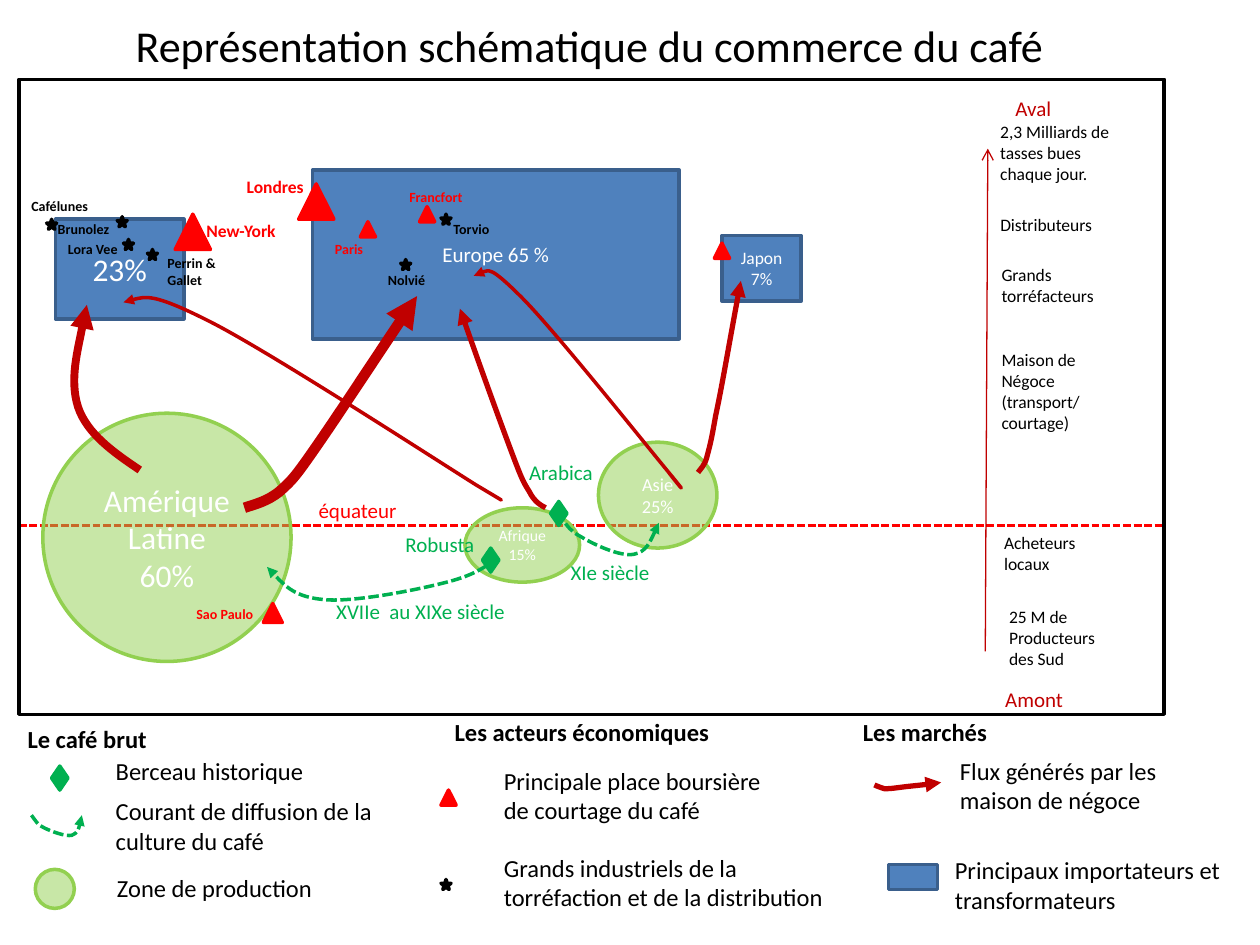
from pptx import Presentation
from pptx.dml.color import RGBColor
from pptx.enum.dml import MSO_LINE
from pptx.enum.shapes import MSO_CONNECTOR, MSO_SHAPE
from pptx.enum.text import MSO_ANCHOR, MSO_AUTO_SIZE, PP_ALIGN
from pptx.oxml.ns import qn
from pptx.util import Cm, Pt
from lxml import etree

RECT, OVAL = MSO_SHAPE.RECTANGLE, MSO_SHAPE.OVAL
DIAMOND, STAR = MSO_SHAPE.DIAMOND, MSO_SHAPE.STAR_5_POINT
PEAK = MSO_SHAPE.ISOSCELES_TRIANGLE
STRAIGHT, DASH = MSO_CONNECTOR.STRAIGHT, MSO_LINE.SQUARE_DOT
CENTER, LEFT = PP_ALIGN.CENTER, PP_ALIGN.LEFT
MIDDLE, GROW = MSO_ANCHOR.MIDDLE, MSO_AUTO_SIZE.SHAPE_TO_FIT_TEXT

BLACK, WHITE, RED, CRIMSON = "000000", "FFFFFF", "FF0000", "C00000"
BLUE, NAVY, LIME, GREEN = "4F81BD", "3A5F8C", "92D050", "00B050"
INCH = 2.54  # places below are in inches, lengths are set in cm


def write(frame, text, size, color, bold=False, align=LEFT):
    frame.text = text
    frame.word_wrap = True
    for para in frame.paragraphs:
        para.alignment = align
        for run in para.runs:
            run.font.name = "Calibri"
            run.font.size = Pt(size)
            run.font.bold = bold
            run.font.color.rgb = RGBColor.from_string(color)


def stroke(item, color, width, dash=None, end=None, head="triangle"):
    item.line.color.rgb = RGBColor.from_string(color)
    item.line.width = Pt(width)
    if dash:
        item.line.dash_style = dash
    if end:
        line = item.element.spPr.find(qn("a:ln"))
        etree.SubElement(line, qn("a:" + end), type=head)


deck = Presentation()
deck.slide_width, deck.slide_height = Cm(25.4), Cm(19.05)
slide = deck.slides.add_slide(deck.slide_layouts[6])
shapes = slide.shapes

# Title
title = shapes.add_textbox(*[Cm(v * INCH) for v in (0.45, 0.21, 8.46, 0.3)])
write(title.text_frame, "Représentation schématique du commerce du café",
      25.2, BLACK, align=CENTER)
title.text_frame.vertical_anchor = MIDDLE

# Equator and supply chain axis
for ends, color, width, dash, end in [
    ((0.15, 4.17, 9.24, 4.17), RED, 1.5, DASH, None),
    ((7.82, 5.17, 7.84, 1.18), CRIMSON, 0.75, None, "tailEnd"),
]:
    rule = shapes.add_connector(STRAIGHT, *[Cm(v * INCH) for v in ends])
    stroke(rule, color, width, dash, end, "arrow")
    etree.SubElement(rule.element.spPr, qn("a:effectLst"))

# Markets, production zones and markers, with their legend keys, then frame
solids = [
    (RECT, BLUE, NAVY, [
        ((0.44, 1.74, 1.02, 0.79), "23%", 18),
        ((2.48, 1.35, 2.91, 1.34), "Europe 65 %", 12),
        ((5.73, 1.87, 0.63, 0.52), "Japon 7%", 10),
        ((7.05, 6.86, 0.39, 0.2), "", 10)]),
    (OVAL, LIME, LIME, [
        ((0.34, 3.28, 1.97, 1.97), "Amérique Latine\n60%", 18),
        ((3.69, 4.03, 0.91, 0.59), "Afrique\n15%", 9),
        ((4.75, 3.51, 0.94, 0.84), "Asie\n25%", 10.5),
        ((0.28, 6.9, 0.31, 0.31), "", 10)]),
    (DIAMOND, GREEN, GREEN, [
        ((x, y, 0.13, 0.19), "", 10)
        for x, y in [(4.37, 3.98), (3.83, 4.35), (0.41, 6.08)]]),
    (STAR, BLACK, BLACK, [
        ((x, y, 0.08, 0.08), "", 10)
        for x, y in [(0.37, 1.74), (0.93, 1.72), (0.98, 1.9), (1.17, 1.98),
                     (3.5, 1.7), (3.18, 2.06), (3.5, 6.98)]]),
    (PEAK, RED, RED, [
        ((x, y, side, side), "", 10)
        for x, y, side in [(1.39, 1.7, 0.28), (2.37, 1.46, 0.28),
                           (3.33, 1.64, 0.12), (2.86, 1.76, 0.12),
                           (5.67, 1.93, 0.12), (3.5, 6.27, 0.12),
                           (2.09, 4.79, 0.15)]]),
    (RECT, None, BLACK, [((0.15, 0.63, 9.09, 5.04), "", 10)]),
]
for kind, fill, edge, places in solids:
    for at, text, size in places:
        solid = shapes.add_shape(kind, *[Cm(v * INCH) for v in at])
        solid.shadow.inherit = False
        stroke(solid, edge, 2)
        if fill:
            solid.fill.solid()
            solid.fill.fore_color.rgb = RGBColor.from_string(fill)
        else:
            solid.fill.background()
        if kind == OVAL:
            tint = solid.element.spPr.find(qn("a:solidFill"))[0]
            etree.SubElement(tint, qn("a:alpha"), val="50000")
        write(solid.text_frame, text, size, WHITE, align=CENTER)

# Curved flows: a start point, then three points for each Bézier piece
flows = [
    (CRIMSON, 6, None, "tailEnd", [
        (1.94, 4.03), (2.03, 4), (2.12, 3.98), (2.22, 3.9), (2.32, 3.81),
        (2.34, 3.79), (2.52, 3.53), (2.7, 3.27), (3, 2.81), (3.31, 2.35)]),
    (CRIMSON, 3, None, "tailEnd", [
        (4.33, 4.03), (4.29, 4.01), (4.24, 3.98), (4.2, 3.9), (4.15, 3.82),
        (4.14, 3.8), (4.05, 3.56), (3.96, 3.32), (3.8, 2.88), (3.65, 2.45)]),
    (CRIMSON, 4.5, None, "tailEnd", [
        (1.11, 3.73), (0.9, 3.59), (0.69, 3.44), (0.62, 3.23),
        (0.55, 3.01), (0.69, 2.42), (0.69, 2.42)]),
    (CRIMSON, 2, None, "headEnd", [
        (3.76, 2.19), (3.82, 2.15), (3.88, 2.1), (4.14, 2.36), (4.4, 2.62),
        (5.11, 3.51), (5.3, 3.74), (5.49, 3.97), (5.39, 3.86), (5.3, 3.74)]),
    (CRIMSON, 2, None, "headEnd", [
        (0.98, 2.4), (1.1, 2.36), (1.21, 2.32), (1.68, 2.56), (2.15, 2.8),
        (3.43, 3.63), (3.78, 3.85), (4.13, 4.06), (3.95, 3.95), (3.78, 3.85)]),
    (CRIMSON, 3, None, "tailEnd", [
        (5.54, 3.75), (5.56, 3.72), (5.59, 3.7), (5.61, 3.63), (5.63, 3.55),
        (5.64, 3.53), (5.68, 3.3), (5.73, 3.07), (5.8, 2.65), (5.88, 2.23)]),
    (GREEN, 2, DASH, "tailEnd", [
        (3.95, 4.42), (3.87, 4.49), (3.78, 4.56), (3.55, 4.62), (3.32, 4.68),
        (2.82, 4.78), (2.58, 4.76), (2.34, 4.74), (2.23, 4.62), (2.12, 4.5)]),
    (GREEN, 2, DASH, "tailEnd", [
        (4.43, 4.06), (4.47, 4.13), (4.51, 4.21), (4.61, 4.26), (4.71, 4.32),
        (4.92, 4.42), (5.03, 4.4), (5.13, 4.38), (5.18, 4.26), (5.23, 4.15)]),
    (GREEN, 2, DASH, "tailEnd", [
        (0.25, 6.47), (0.28, 6.51), (0.3, 6.55), (0.35, 6.57), (0.41, 6.6),
        (0.52, 6.64), (0.57, 6.63), (0.62, 6.61), (0.64, 6.54), (0.65, 6.47)]),
    (CRIMSON, 3, None, "tailEnd", [
        (6.94, 6.23), (6.96, 6.24), (6.99, 6.25), (7.02, 6.26), (7.05, 6.26),
        (7.06, 6.26), (7.14, 6.25), (7.21, 6.24), (7.34, 6.23), (7.47, 6.21)]),
]
for color, width, dash, end, knots in flows:
    spots = [(Cm(x * INCH), Cm(y * INCH)) for x, y in knots]
    pen = shapes.build_freeform(*spots[0])
    pen.add_line_segments(spots[1:], close=False)
    flow = pen.convert_to_shape()
    flow.shadow.inherit = False
    flow.fill.background()
    stroke(flow, color, width, dash, end)
    track = next(flow.element.iter(qn("a:path")))
    steps = track.findall(qn("a:lnTo"))
    for i in range(0, len(steps), 3):
        curve = etree.SubElement(track, qn("a:cubicBezTo"))
        for step in steps[i:i + 3]:
            curve.append(step[0])
            track.remove(step)

# Labels, grouped by size, colour and weight
labels = [
    (8, BLACK, True, [  # roasters
        (0.15, 1.52, 0.8, 0.24, "Cafélunes"),
        (0.36, 1.7, 0.71, 0.24, "Brunolez"),
        (0.44, 1.86, 0.71, 0.24, "Lora Vee"),
        (1.23, 1.97, 0.71, 0.37, "Perrin & Gallet"),
        (3.5, 1.7, 0.71, 0.24, "Torvio"),
        (2.98, 2.11, 0.71, 0.24, "Nolvié")]),
    (10, RED, True, [  # main exchanges
        (1.54, 1.7, 0.79, 0.27, "New-York"),
        (1.86, 1.35, 0.79, 0.27, "Londres")]),
    (8, RED, True, [  # other exchanges
        (3.15, 1.45, 0.79, 0.24, "Francfort"),
        (2.56, 1.86, 0.48, 0.24, "Paris"),
        (1.46, 4.76, 0.79, 0.24, "Sao Paulo")]),
    (12, CRIMSON, False, [  # axis ends
        (7.88, 5.4, 1.26, 0.3, "Amont"),
        (7.96, 0.71, 0.55, 0.3, "Aval")]),
    (10, BLACK, False, [  # axis stages
        (7.84, 0.91, 1.14, 0.61, "2,3 Milliards de tasses bues chaque jour."),
        (7.84, 1.65, 1.02, 0.27, "Distributeurs"),
        (7.85, 2.05, 1.02, 0.44, "Grands torréfacteurs"),
        (7.85, 2.72, 1.02, 0.77, "Maison de Négoce (transport/\ncourtage)"),
        (7.87, 4.17, 1.02, 0.44, "Acheteurs locaux"),
        (7.91, 4.76, 1.02, 0.61, "25 M de Producteurs des Sud")]),
    (12, GREEN, False, [  # spread of the crop
        (2.57, 4.7, 1.55, 0.3, "XVIIe  au XIXe siècle"),
        (4.43, 4.39, 1.68, 0.3, "XIe siècle"),
        (3.12, 4.17, 0.8, 0.3, "Robusta"),
        (4.1, 3.6, 1.12, 0.3, "Arabica")]),
    (12, RED, False, [(2.43, 3.9, 1.32, 0.3, "équateur")]),
    (14, BLACK, True, [  # legend heads
        (0.12, 5.7, 3.19, 0.34, "Le café brut"),
        (3.51, 5.64, 2.37, 0.34, "Les acteurs économiques"),
        (6.75, 5.64, 2.37, 0.34, "Les marchés")]),
    (14, BLACK, False, [  # legend entries
        (0.82, 5.95, 2.37, 0.34, "Berceau historique"),
        (0.82, 6.27, 2.37, 0.57, "Courant de diffusion de la culture du café"),
        (0.83, 6.88, 2.37, 0.34, "Zone de production"),
        (3.9, 6.03, 2.37, 0.57, "Principale place boursière de courtage du café"),
        (3.9, 6.72, 2.92, 0.57,
         "Grands industriels de la torréfaction et de la distribution"),
        (7.52, 5.95, 2.37, 0.57, "Flux générés par les maison de négoce"),
        (7.48, 6.74, 2.37, 0.57, "Principaux importateurs et transformateurs")]),
]
for size, color, bold, notes in labels:
    for *at, text in notes:
        label = shapes.add_textbox(*[Cm(v * INCH) for v in at])
        write(label.text_frame, text, size, color, bold)
        label.text_frame.auto_size = GROW

deck.save("out.pptx")
